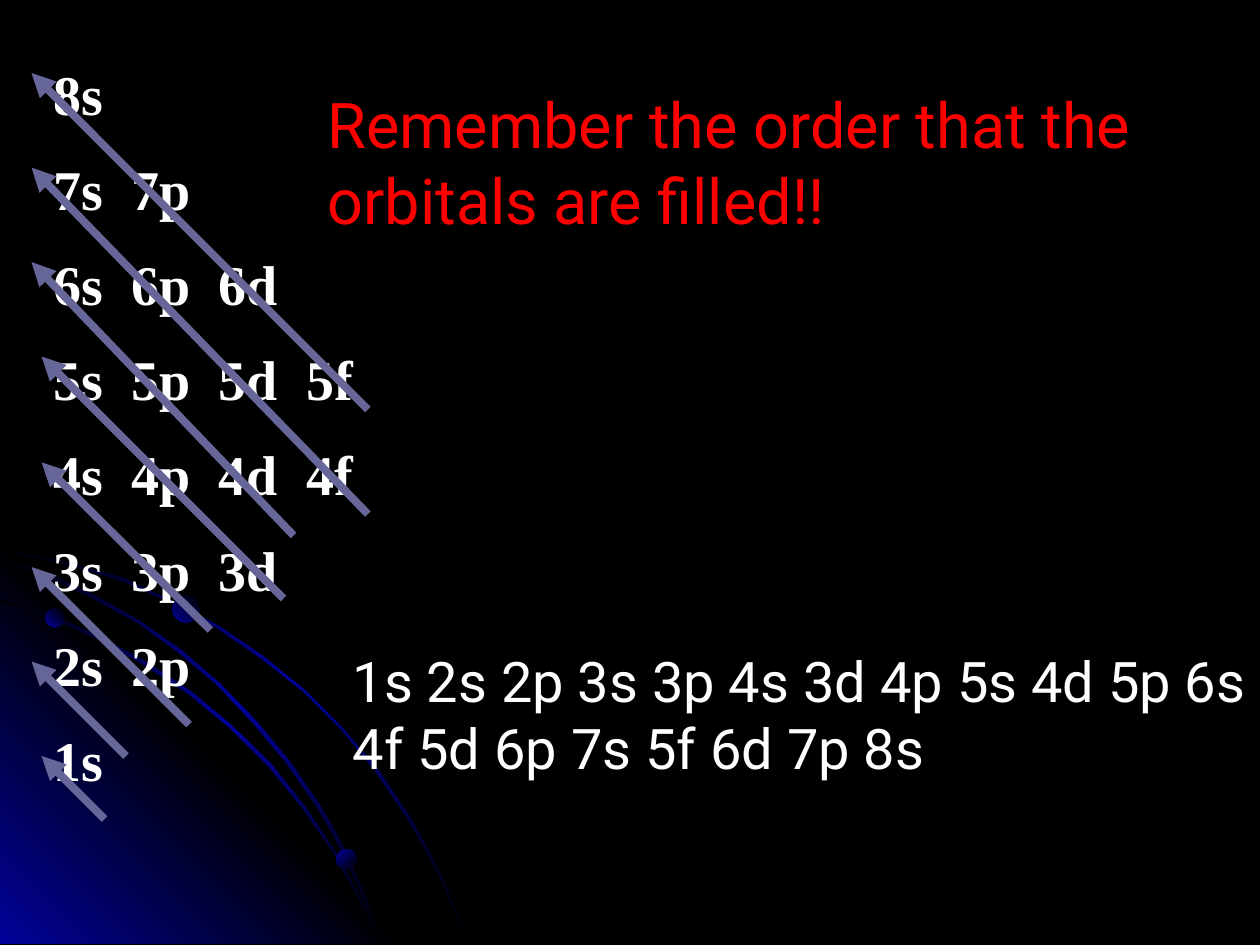
import pptx
import pptx.dml.color
import pptx.enum.shapes
import pptx.enum.text
import pptx.oxml
import pptx.oxml.ns
import pptx.util

EMU_PER_PX = 9144  # 100 px to the inch
BLACK = pptx.dml.color.RGBColor(0x00, 0x00, 0x00)
BLUE = pptx.dml.color.RGBColor(0x01, 0x01, 0x99)
WHITE = pptx.dml.color.RGBColor(0xFF, 0xFF, 0xFF)
RED = pptx.dml.color.RGBColor(0xFF, 0x00, 0x00)
VIOLET = pptx.dml.color.RGBColor(0x66, 0x66, 0x99)

ORBIT_OUTLINES = [
    [(57, 447), (28, 441), (0, 435), (0, 438), (28, 443), (56, 449), (97, 461),
     (135, 478), (173, 499), (208, 523), (241, 549), (271, 579), (298, 612),
     (323, 649), (337, 673), (350, 698), (360, 723), (370, 749), (372, 749),
     (362, 723), (352, 698), (339, 673), (325, 648), (300, 611), (272, 578),
     (242, 548), (209, 521), (174, 497), (136, 477), (98, 459)],
    [(285, 714), (294, 732), (301, 749), (303, 749), (296, 730), (286, 712),
     (266, 676), (242, 640), (215, 606), (184, 576), (152, 549), (117, 526),
     (79, 505), (41, 488), (0, 475), (0, 477), (39, 490), (77, 507),
     (115, 528), (150, 551), (183, 578), (213, 608), (240, 641), (265, 677)],
    [(0, 442), (0, 444), (36, 457), (74, 475), (109, 494), (142, 518),
     (173, 544), (202, 575), (227, 605), (252, 641), (267, 667), (280, 694),
     (292, 722), (301, 749), (303, 749), (294, 720), (282, 693), (269, 665),
     (254, 639), (229, 603), (204, 573), (175, 543), (144, 516), (111, 493),
     (76, 473), (39, 455)],
]
CORNER_OUTLINE = [(322, 749), (0, 749), (0, 427)]
ELECTRONS = [(36, 483, 15, 315), (267, 674, 16, 45), (137, 473, 21, 315)]
ARROWS = [
    ((83, 650), (33, 600)), ((100, 600), (25, 525)),
    ((150, 575), (25, 450)), ((167, 500), (33, 367)),
    ((225, 475), (33, 283)), ((233, 425), (25, 208)),
    ((292, 408), (25, 133)), ((292, 325), (25, 58)),
]
SHELL_COUNT = 8
FILLING_ORDER = "1s 2s 2p 3s 3p 4s 3d 4p 5s 4d 5p 6s 4f 5d 6p 7s 5f 6d 7p 8s"


def px(length):
    return pptx.util.Emu(length * EMU_PER_PX)


def shell_row(shell):
    """Return the subshells of one shell that lie on the filling diagram."""
    letters = "spdf"[:min(shell, SHELL_COUNT + 1 - shell)]
    return "  ".join(f"{shell}{letter}" for letter in letters)


class SlideBuilder:
    """Draws styled elements on the current slide, with lengths in px."""

    def __init__(self, slide):
        self.slide = slide
        self.shapes = slide.shapes
        self.body_font = "Roboto"
        self.orbital_font = "Times New Roman"

    def background(self, color):
        fill = self.slide.background.fill
        fill.solid()
        fill.fore_color.rgb = color

    def gradient(self, shape, colors, angle):
        """Fill with evenly spaced colours, the angle running clockwise."""
        shape.shadow.inherit = False
        shape.line.fill.background()
        shape.fill.background()
        step = 100000 // (len(colors) - 1)
        stops = "".join(
            f'<a:gs pos="{index * step}"><a:srgbClr val="{color}"/></a:gs>'
            for index, color in enumerate(colors))
        properties = shape._element.spPr
        empty_fill = properties.find(pptx.oxml.ns.qn("a:noFill"))
        properties.replace(empty_fill, pptx.oxml.parse_xml(
            f'<a:gradFill {pptx.oxml.ns.nsdecls("a")} rotWithShape="1">'
            f'<a:gsLst>{stops}</a:gsLst>'
            f'<a:lin ang="{angle * 60000}" scaled="1"/></a:gradFill>'))

    def outline(self, points, colors, angle):
        builder = self.shapes.build_freeform(*points[0], scale=EMU_PER_PX)
        builder.add_line_segments(points[1:], close=True)
        self.gradient(builder.convert_to_shape(), colors, angle)

    def electron(self, left, top, size, angle):
        shape = self.shapes.add_shape(
            pptx.enum.shapes.MSO_SHAPE.OVAL, px(left), px(top), px(size), px(size))
        self.gradient(shape, [BLUE, BLACK], angle)

    def arrow(self, start, end):
        connector = self.shapes.add_connector(
            pptx.enum.shapes.MSO_CONNECTOR.STRAIGHT,
            *(px(length) for length in start + end))
        connector.line.color.rgb = VIOLET
        connector.line.width = pptx.util.Pt(4.5)
        namespace = pptx.oxml.ns.nsdecls("a")
        connector.line._ln.append(
            pptx.oxml.parse_xml(f'<a:tailEnd {namespace} type="triangle"/>'))
        connector._element.spPr.append(
            pptx.oxml.parse_xml(f"<a:effectLst {namespace}/>"))

    def format_text(self, shape, text, size, font_name, color, bold=False):
        frame = shape.text_frame
        frame.text = text
        frame.word_wrap = True
        frame.auto_size = pptx.enum.text.MSO_AUTO_SIZE.SHAPE_TO_FIT_TEXT
        frame.vertical_anchor = pptx.enum.text.MSO_ANCHOR.TOP
        for paragraph in frame.paragraphs:
            paragraph.alignment = pptx.enum.text.PP_ALIGN.LEFT
            for run in paragraph.runs:
                run.font.size = pptx.util.Pt(size)
                run.font.name = font_name
                run.font.color.rgb = color
                run.font.bold = bold

    def title(self, box, text):
        shape = self.shapes.title
        shape.left, shape.top, shape.width, shape.height = map(px, box)
        self.format_text(shape, text, 36, self.body_font, RED)

    def text(self, box, lines, font_name, bold=False):
        """Add white lines, each spaced by half a line from the one before."""
        shape = self.shapes.add_textbox(*map(px, box))
        self.format_text(shape, "\n".join(lines), 32, font_name, WHITE, bold)
        for paragraph in shape.text_frame.paragraphs:
            paragraph._p.get_or_add_pPr().append(pptx.oxml.parse_xml(
                f'<a:spcBef {pptx.oxml.ns.nsdecls("a")}>'
                '<a:spcPct val="50000"/></a:spcBef>'))


def main():
    presentation = pptx.Presentation()
    presentation.slide_width = px(1000)
    presentation.slide_height = px(750)
    title_only = presentation.slide_layouts[5]
    builder = SlideBuilder(presentation.slides.add_slide(title_only))

    builder.background(BLACK)
    first_orbit, *inner_orbits = ORBIT_OUTLINES
    orbit_colors = [BLACK, BLUE, BLACK]
    builder.outline(first_orbit, orbit_colors, 45)
    builder.outline(CORNER_OUTLINE, [BLUE, BLACK, BLUE], 315)
    for orbit in inner_orbits:
        builder.outline(orbit, orbit_colors, 45)
    for electron in ELECTRONS:
        builder.electron(*electron)

    rows = [shell_row(shell) for shell in range(SHELL_COUNT, 0, -1)]
    builder.text((33, 42, 267, 684), rows, builder.orbital_font, bold=True)
    builder.text((270, 508, 733, 117), [FILLING_ORDER], builder.body_font)
    for start, end in ARROWS:
        builder.arrow(start, end)
    builder.title((250, 63, 717, 131),
                  "Remember the order that the orbitals are filled!!")

    presentation.save("out.pptx")


if __name__ == "__main__":
    main()
